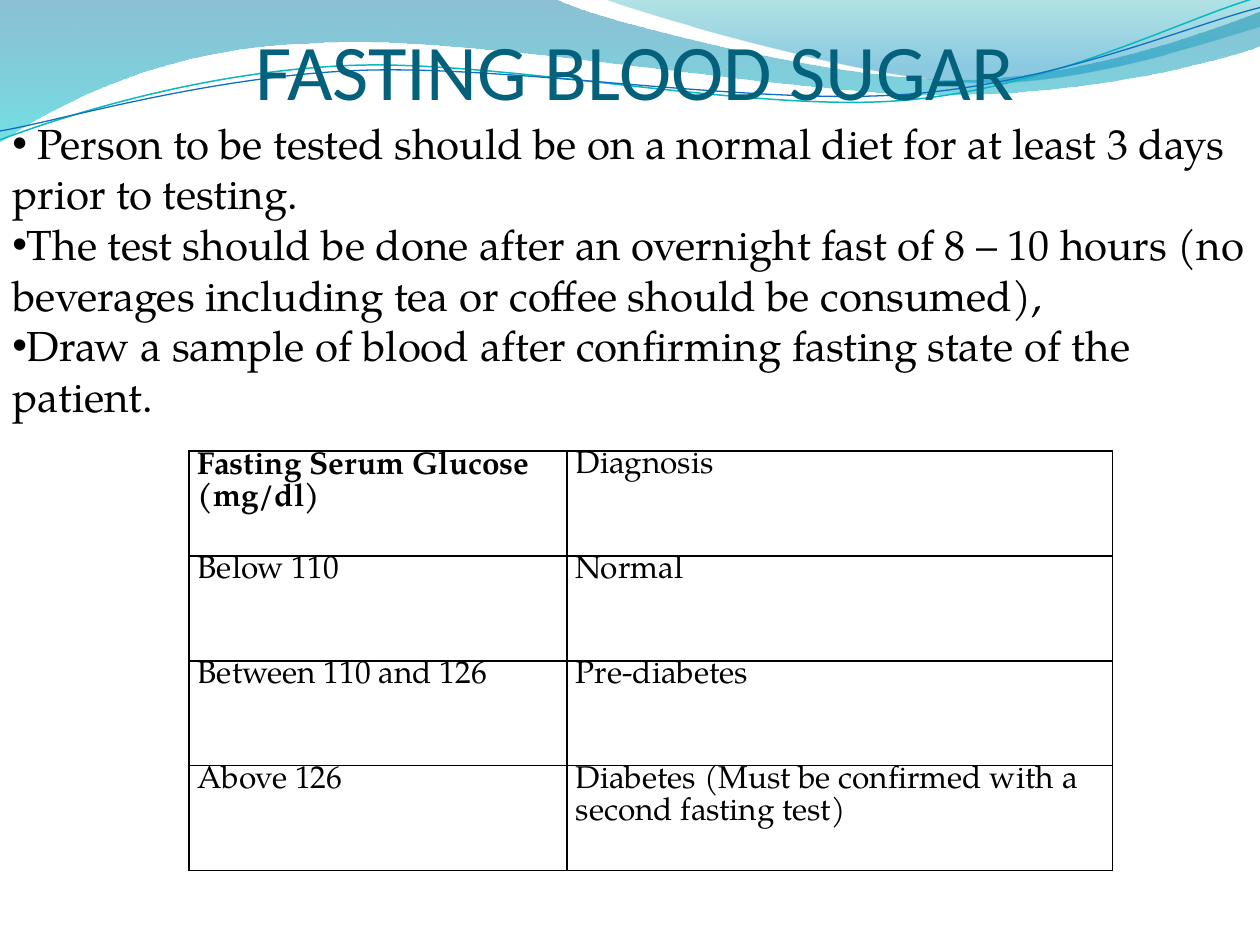
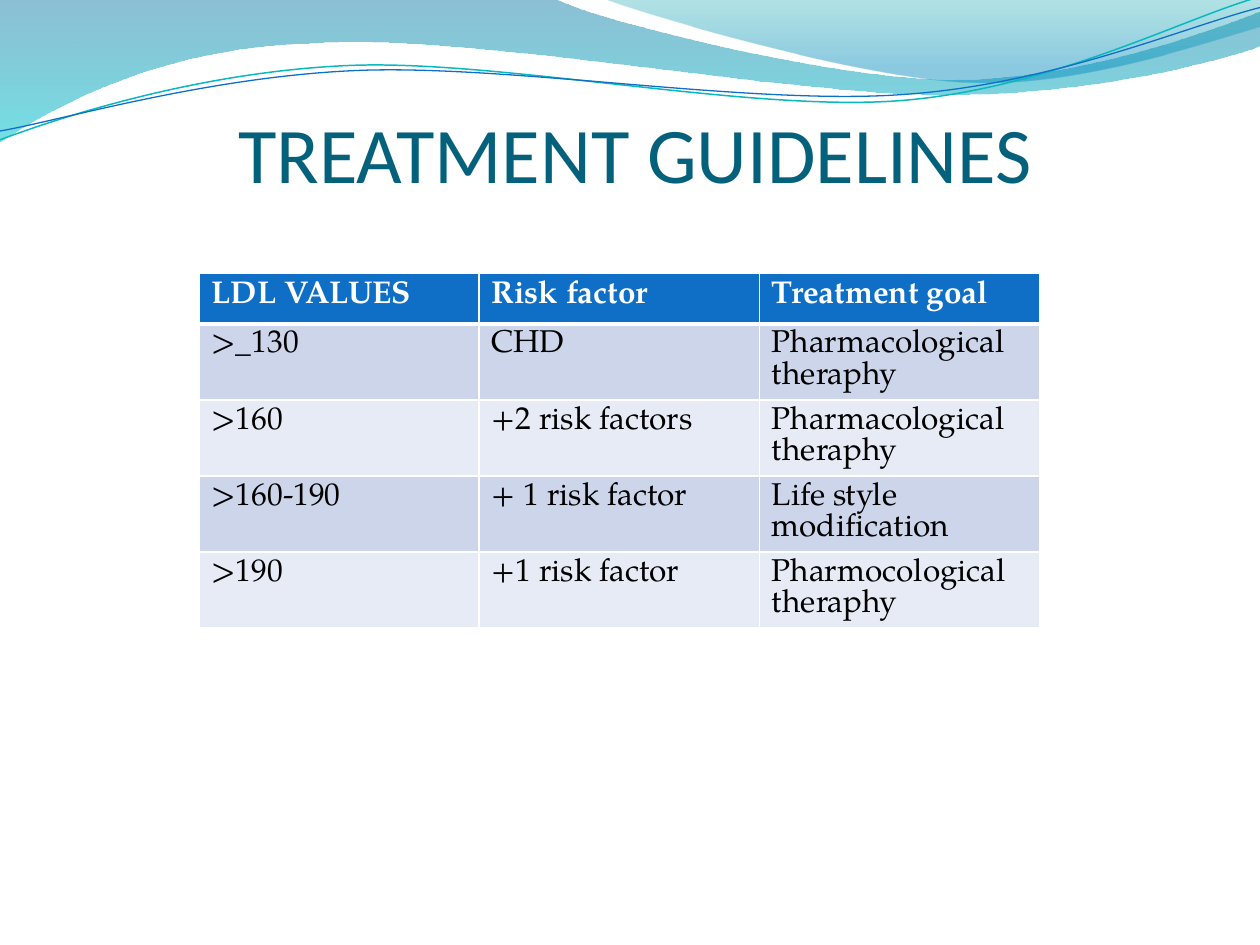
import math

from pptx import Presentation
from pptx import util as u
from pptx.dml.color import RGBColor
from pptx.enum import text
from pptx.oxml.ns import qn
from lxml import etree

BODY_FONT, TITLE_FONT = "TeX Gyre Pagella", "Calibri"
BLACK, WHITE, BLUE, TEAL, TITLE_COLOR = "000000", "FFFFFF", "0F6FC6", "0AB8BF", "04617B"
BANDS = ["CCD5EA", "E7EBF5"]

# Outlines in inches: a pair is a straight step, six numbers are a cubic curve.
# Gradient stops: position, colour, opacity in percent.
WAVES = [
    {"outline": [(0, 0), (4.4, -0.01), (4.76, 0.17, 6.64, 0.63, 7.58, 0.63),
                 (8.53, 0.63, 9.58, 0.26, 10, 0.09), (10.01, 0.36),
                 (9.83, 0.44, 8.7, 0.76, 7.46, 0.75), (6.22, 0.75, 3.82, 0.28, 2.57, 0.34),
                 (1.29, 0.36, 0.46, 0.83, -0.01, 1.13), (0, 0)],
     "stops": [(0, "0074A1", 45), (1, "00C6CF", 55)]},
    {"outline": [(4.79, -0.01), (5.09, 0.11, 6.82, 0.62, 7.69, 0.65),
                 (8.56, 0.69, 9.61, 0.32, 10, 0.21), (10, 0), (4.79, -0.01)],
     "stops": [(0, "00A1A9", 30), (0.8, "008BBF", 45)]},
    {"outline": [(0, 1.11), (0.48, 0.93, 1.58, 0.57, 2.77, 0.52),
                 (3.95, 0.47, 5.93, 0.89, 7.13, 0.8), (8.33, 0.71, 9.38, 0.15, 9.98, -0.02)],
     "line": (TEAL, 0.85), "turn": 2.7, "pivot": (4.99, 0.57)},
    {"outline": [(0, 1.04), (0.47, 0.96, 1.64, 0.61, 2.83, 0.56),
                 (4.03, 0.51, 5.97, 0.84, 7.17, 0.75), (8.36, 0.67, 9.41, 0.21, 10, 0.06)],
     "line": (BLUE, 0.75), "turn": 2.7, "pivot": (5, 0.59)},
]

FASTING_STEPS = [
    " Person to be tested should be on a normal diet for at least 3 days prior to testing.",
    "The test should be done after an overnight fast of 8 – 10 hours (no beverages including "
    "tea or coffee should be consumed),",
    "Draw a sample of blood after confirming fasting state of the patient.",
]
GLUCOSE_TABLE = {
    "rows": [("Fasting Serum Glucose (mg/dl)", "Diagnosis"),
             ("Below 110", "Normal"),
             ("Between 110 and 126", "Pre-diabetes"),
             ("Above 126", "Diabetes (Must be confirmed with a second fasting test)")],
    "at": (1.5, 3.58), "widths": [3, 4.33], "row_height": 3.33 / 4,
    "margins": (0.07, 0), "border": BLACK, "bold_cells": [(0, 0)],
}
LDL_TABLE = {
    "rows": [("LDL VALUES", "Risk factor", "Treatment goal"),
             (">_130", "CHD", "Pharmacological theraphy"),
             (">160", "+2 risk factors", "Pharmacological theraphy"),
             (">160-190", "+ 1 risk factor", "Life style modification"),
             (">190", "+1 risk factor", "Pharmocological theraphy")],
    "at": (1.58, 2.17), "widths": [6.67 / 3] * 3, "row_height": 0.4,
    "margins": (0.1, 0.05), "border": WHITE, "bold_cells": [(0, 0), (0, 1), (0, 2)],
    "banded": True,
}


def color(hex_value):
    return RGBColor.from_string(hex_value)


def set_all(target, values):
    for name, value in values.items():
        setattr(target, name, value)


def write(paragraph, content, size, font=BODY_FONT, hex_value=BLACK, bold=False):
    run = paragraph.add_run()
    run.text = content
    set_all(run.font, {"size": u.Pt(size), "name": font, "bold": bold})
    run.font.color.rgb = color(hex_value)


def outline_points(wave):
    """Return, for each step, its points in EMU, turned clockwise about the pivot."""
    angle = math.radians(wave.get("turn", 0))
    pivot_x, pivot_y = wave.get("pivot", (0, 0))
    cos, sin = math.cos(angle), math.sin(angle)

    def turned(x, y):
        x, y = x - pivot_x, y - pivot_y
        return (u.Inches(pivot_x + x * cos - y * sin), u.Inches(pivot_y + x * sin + y * cos))

    return [[turned(*part[i:i + 2]) for i in range(0, len(part), 2)]
            for part in wave["outline"]]


def draw_outline(slide, wave):
    parts = outline_points(wave)
    ends = [part[-1] for part in parts]
    builder = slide.shapes.build_freeform(*ends[0])
    builder.add_line_segments(ends[1:], close="stops" in wave)
    shape = builder.convert_to_shape()
    for step, points in zip(list(shape.element.iter(qn("a:lnTo"))), parts[1:]):
        if len(points) == 3:
            curve = etree.Element(qn("a:cubicBezTo"))
            for x, y in points:
                etree.SubElement(curve, qn("a:pt"), x=str(x - shape.left), y=str(y - shape.top))
            step.getparent().replace(step, curve)
    shape.rotation = -wave.get("turn", 0)
    return shape


def fill_gradient(shape, stops):
    shape.fill.gradient()
    shape.fill.gradient_angle = 270
    for stop, (position, hex_value, _) in zip(shape.fill.gradient_stops, stops):
        stop.position = position
        stop.color.rgb = color(hex_value)
    for node, (_, _, opacity) in zip(shape.element.spPr.iter(qn("a:srgbClr")), stops):
        etree.SubElement(node, qn("a:alpha"), val=str(opacity * 1000))


def add_waves(slide, master):
    """Draw the waves, then move them to the master that all slides share."""
    for number, wave in enumerate(WAVES, 101):
        shape = draw_outline(slide, wave)
        shape.shadow.inherit = False
        if "stops" in wave:
            fill_gradient(shape, wave["stops"])
            shape.line.fill.background()
        else:
            hex_value, width = wave["line"]
            shape.fill.background()
            shape.line.color.rgb = color(hex_value)
            shape.line.width = u.Pt(width)
        shape.element.nvSpPr.cNvPr.set("id", str(number))
        master.element.cSld.spTree.append(shape.element)


def add_text_frame(slide, left, top, width, height):
    box = slide.shapes.add_textbox(*map(u.Inches, (left, top, width, height)))
    box.text_frame.word_wrap = True
    return box.text_frame


def add_title(slide, title, top, height):
    frame = add_text_frame(slide, 0.5, top, 9.08, height)
    set_all(frame, {"margin_left": 0, "margin_right": 0, "margin_bottom": 0,
                    "vertical_anchor": text.MSO_ANCHOR.BOTTOM})
    paragraph = frame.paragraphs[0]
    paragraph.alignment = text.PP_ALIGN.CENTER
    write(paragraph, title, 45, TITLE_FONT, TITLE_COLOR)


def add_bullets(slide, items):
    frame = add_text_frame(slide, 0, 0.58, 10, 2.83)
    frame.margin_top = u.Inches(0.35)
    for index, item in enumerate(items):
        paragraph = frame.add_paragraph() if index else frame.paragraphs[0]
        paragraph.line_spacing = u.Pt(28.9)
        properties = paragraph._p.get_or_add_pPr()
        etree.SubElement(properties, qn("a:buFont"), typeface="Arial")
        etree.SubElement(properties, qn("a:buChar"), char="•")
        write(paragraph, item, 24)


def set_borders(cell, hex_value, bottom_width):
    properties = cell._tc.get_or_add_tcPr()
    for side, width in zip("LRTB", (1, 1, 1, bottom_width)):
        line = etree.SubElement(properties, qn(f"a:ln{side}"), w=str(u.Pt(width)))
        fill = etree.SubElement(line, qn("a:solidFill"))
        etree.SubElement(fill, qn("a:srgbClr"), val=hex_value)


def add_data_table(slide, data):
    rows, widths, row_height = data["rows"], data["widths"], data["row_height"]
    size = (sum(widths), row_height * len(rows))
    table = slide.shapes.add_table(len(rows), len(widths),
                                   *map(u.Inches, data["at"] + size)).table
    set_all(table, {"first_row": False, "horz_banding": False})
    for column, width in zip(table.columns, widths):
        column.width = u.Inches(width)
    side, end = map(u.Inches, data["margins"])
    banded = data.get("banded", False)
    for r, values in enumerate(rows):
        banded_header = banded and r == 0
        for c, value in enumerate(values):
            cell = table.cell(r, c)
            set_all(cell, {"margin_left": side, "margin_right": side,
                           "margin_top": end, "margin_bottom": end})
            set_borders(cell, data["border"], 3 if banded_header else 1)
            if banded:
                cell.fill.solid()
                cell.fill.fore_color.rgb = color(BLUE if r == 0 else BANDS[(r - 1) % 2])
            else:
                cell.fill.background()
            paragraph = cell.text_frame.paragraphs[0]
            paragraph.line_spacing = u.Pt(18.1)
            write(paragraph, value, 18, hex_value=WHITE if banded_header else BLACK,
                  bold=(r, c) in data["bold_cells"])


def main():
    presentation = Presentation()
    set_all(presentation, {"slide_width": u.Inches(10), "slide_height": u.Inches(7.5)})
    blank = presentation.slide_layouts[6]

    fasting = presentation.slides.add_slide(blank)
    add_waves(fasting, presentation.slide_master)
    add_bullets(fasting, FASTING_STEPS)
    add_data_table(fasting, GLUCOSE_TABLE)
    add_title(fasting, "FASTING BLOOD SUGAR", 0.33, 0.59)

    treatment = presentation.slides.add_slide(blank)
    add_data_table(treatment, LDL_TABLE)
    add_title(treatment, "TREATMENT GUIDELINES", 0.77, 0.81)

    presentation.save("out.pptx")


if __name__ == "__main__":
    main()
